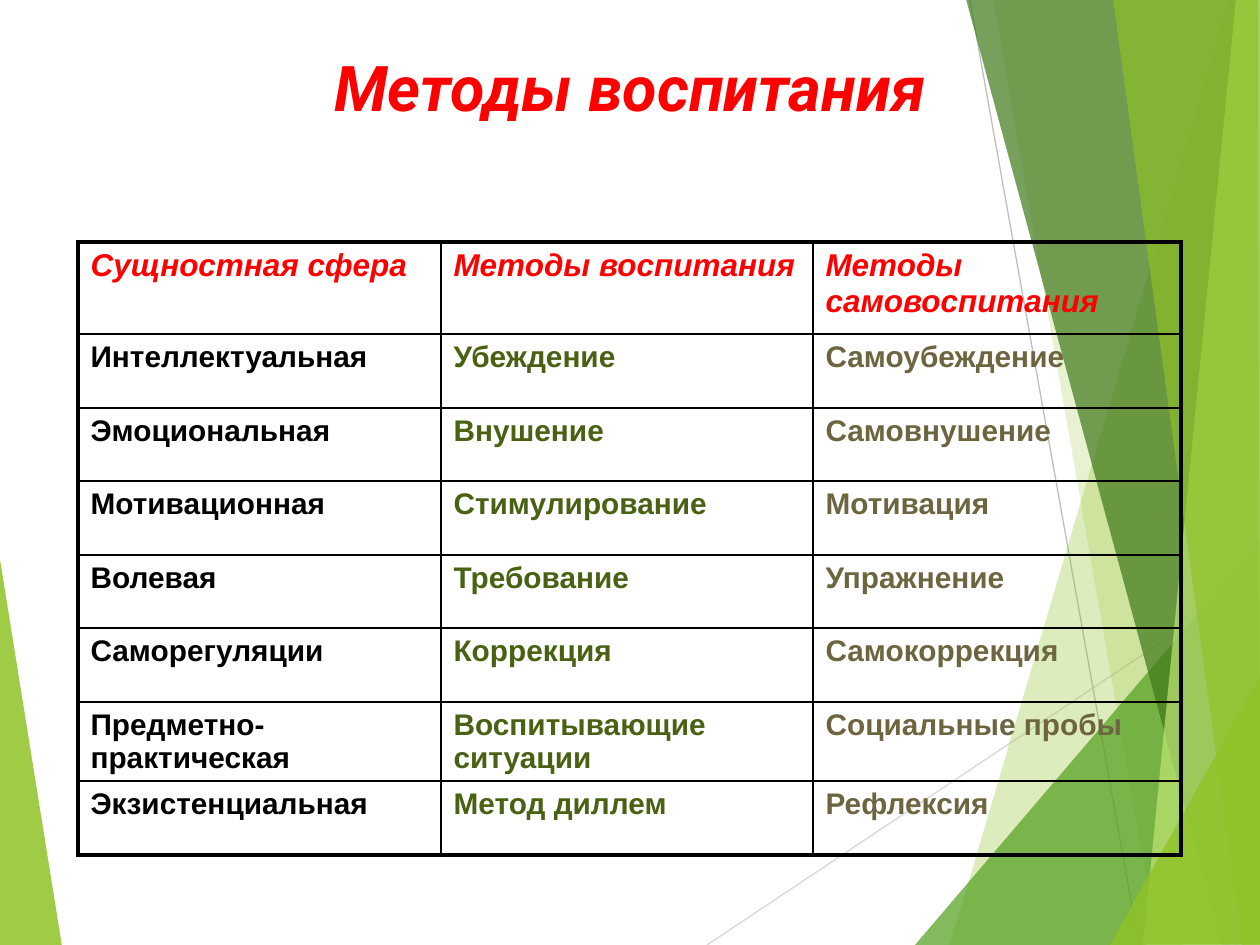
from lxml import etree
from pptx import Presentation
from pptx import util as u
from pptx.dml.color import RGBColor
from pptx.enum import shapes, text
from pptx.oxml import ns

SCALE = u.Inches(1) / 126

BLACK = RGBColor(0x00, 0x00, 0x00)
RED = RGBColor(0xFF, 0x00, 0x00)
OLIVE = RGBColor(0x48, 0x61, 0x13)
KHAKI = RGBColor(0x6D, 0x65, 0x40)
LIME = RGBColor(0x90, 0xC2, 0x26)
GREEN = RGBColor(0x54, 0xA0, 0x21)
DARK_GREEN = RGBColor(0x3F, 0x78, 0x19)
PALE_LIME = RGBColor(0xC0, 0xE4, 0x74)
LIGHT_GRAY = RGBColor(0xD9, 0xD9, 0xD9)
GRAY = RGBColor(0xBF, 0xBF, 0xBF)

LEFT_WEDGE = (LIME, 85, [(-1, 553), (62, 946), (-1, 945)])
RAYS = [
    (LIGHT_GRAY, (707, 945), (1261, 576)),
    (GRAY, (970, 0), (1139, 945)),
]
# Colour, opacity in percent, corners
RIGHT_FACETS = [
    (LIME, 30, [(1229, 0), (950, 945), (1262, 946), (1261, 1)]),
    (LIME, 20, [(993, -1), (1158, 945), (1261, 945), (1261, -1)]),
    (GREEN, 72, [(915, 945), (1260, 541), (1261, 945)]),
    (DARK_GREEN, 70, [(966, -1), (1222, 945), (1261, 944), (1261, -1)]),
    (PALE_LIME, 70, [(1236, -1), (1143, 945), (1261, 945), (1260, -1)]),
    (LIME, 65, [(1113, -1), (1242, 945), (1260, 945), (1258, -1)]),
    (LIME, 80, [(1110, 945), (1261, 674), (1261, 944)]),
]

COLUMN_WIDTHS = [363, 372, 368]
HEADER_HEIGHT = 92
BODY_HEIGHTS = [74, 73]  # alternating
COLUMN_COLORS = [BLACK, OLIVE, KHAKI]
THIN, THICK = u.Pt(1), u.Pt(2.25)
ROWS = [
    ("Сущностная сфера", "Методы воспитания", "Методы самовоспитания"),
    ("Интеллектуальная", "Убеждение", "Самоубеждение"),
    ("Эмоциональная", "Внушение", "Самовнушение"),
    ("Мотивационная", "Стимулирование", "Мотивация"),
    ("Волевая", "Требование", "Упражнение"),
    ("Саморегуляции", "Коррекция", "Самокоррекция"),
    ("Предметно-практическая", "Воспитывающие ситуации", "Социальные пробы"),
    ("Экзистенциальная", "Метод диллем", "Рефлексия"),
]


def px(length):
    return u.Emu(round(length * SCALE))


def add_facet(group, color, opacity, corners):
    builder = group.shapes.build_freeform(*corners[0], scale=SCALE)
    builder.add_line_segments(corners[1:], close=True)
    facet = builder.convert_to_shape()
    facet.shadow.inherit = False
    facet.fill.solid()
    facet.fill.fore_color.rgb = color
    facet.line.fill.background()
    tint = facet.element.spPr.find(".//" + ns.qn("a:srgbClr"))
    etree.SubElement(tint, ns.qn("a:alpha"), val=str(opacity * 1000))


def add_ray(group, color, start, end):
    ray = group.shapes.add_connector(
        shapes.MSO_CONNECTOR.STRAIGHT, *map(px, start + end))
    ray.line.color.rgb = color
    ray.line.width = u.Pt(0.75)
    etree.SubElement(ray.element.spPr, ns.qn("a:effectLst"))


def add_backdrop(page):
    group = page.shapes.add_group_shape()
    add_facet(group, *LEFT_WEDGE)
    for ray in RAYS:
        add_ray(group, *ray)
    for facet in RIGHT_FACETS:
        add_facet(group, *facet)


def format_span(span, font, size, color, italic):
    span.font.name = font
    span.font.size = u.Pt(size)
    span.font.color.rgb = color
    span.font.bold = True
    span.font.italic = italic


def set_title(page, wording):
    title = page.shapes.title
    title.left, title.top, title.width, title.height = map(
        px, (79, 42, 1102, 167))
    frame = title.text_frame
    frame.text = wording
    frame.word_wrap = True
    frame.auto_size = text.MSO_AUTO_SIZE.NONE
    frame.vertical_anchor = text.MSO_ANCHOR.TOP
    para = frame.paragraphs[0]
    para.alignment = text.PP_ALIGN.CENTER
    format_span(para.runs[0], "Roboto", 36, RED, True)
    # The placeholder comes first in the tree; bring it above the backdrop.
    title.element.getparent().append(title.element)


def set_borders(cell, widths):
    """Draw black borders; widths maps the sides L, R, T, B in that order."""
    properties = cell._tc.get_or_add_tcPr()
    for side, width in widths.items():
        line = etree.SubElement(properties, ns.qn("a:ln" + side), w=str(width))
        fill = etree.SubElement(line, ns.qn("a:solidFill"))
        etree.SubElement(fill, ns.qn("a:srgbClr"), val=str(BLACK))


def add_methods_table(page):
    heights = [HEADER_HEIGHT] + [BODY_HEIGHTS[i % 2] for i in range(len(ROWS) - 1)]
    last_row, last_column = len(ROWS) - 1, len(COLUMN_WIDTHS) - 1
    table = page.shapes.add_table(
        len(ROWS), len(COLUMN_WIDTHS), px(78), px(242),
        px(sum(COLUMN_WIDTHS)), px(sum(heights))).table
    table.first_row = table.horz_banding = False
    for column, width in zip(table.columns, COLUMN_WIDTHS):
        column.width = px(width)
    for r, (row, height) in enumerate(zip(table.rows, heights)):
        row.height = px(height)
        for c, cell in enumerate(row.cells):
            set_borders(cell, {
                "L": THICK if c == 0 else THIN,
                "R": THICK if c == last_column else THIN,
                "T": THICK if r == 0 else THIN,
                "B": THICK if r == last_row else THIN,
            })
            cell.fill.background()
            cell.text_frame.text = ROWS[r][c]
            span = cell.text_frame.paragraphs[0].runs[0]
            if r == 0:
                format_span(span, "Arial", 18, RED, True)
            else:
                format_span(span, "Arial", 17, COLUMN_COLORS[c], False)


def main():
    deck = Presentation()
    deck.slide_width, deck.slide_height = px(1260), px(945)
    page = deck.slides.add_slide(deck.slide_layouts.get_by_name("Title Only"))
    add_backdrop(page)
    set_title(page, "Методы воспитания")
    add_methods_table(page)
    deck.save("out.pptx")


if __name__ == "__main__":
    main()
